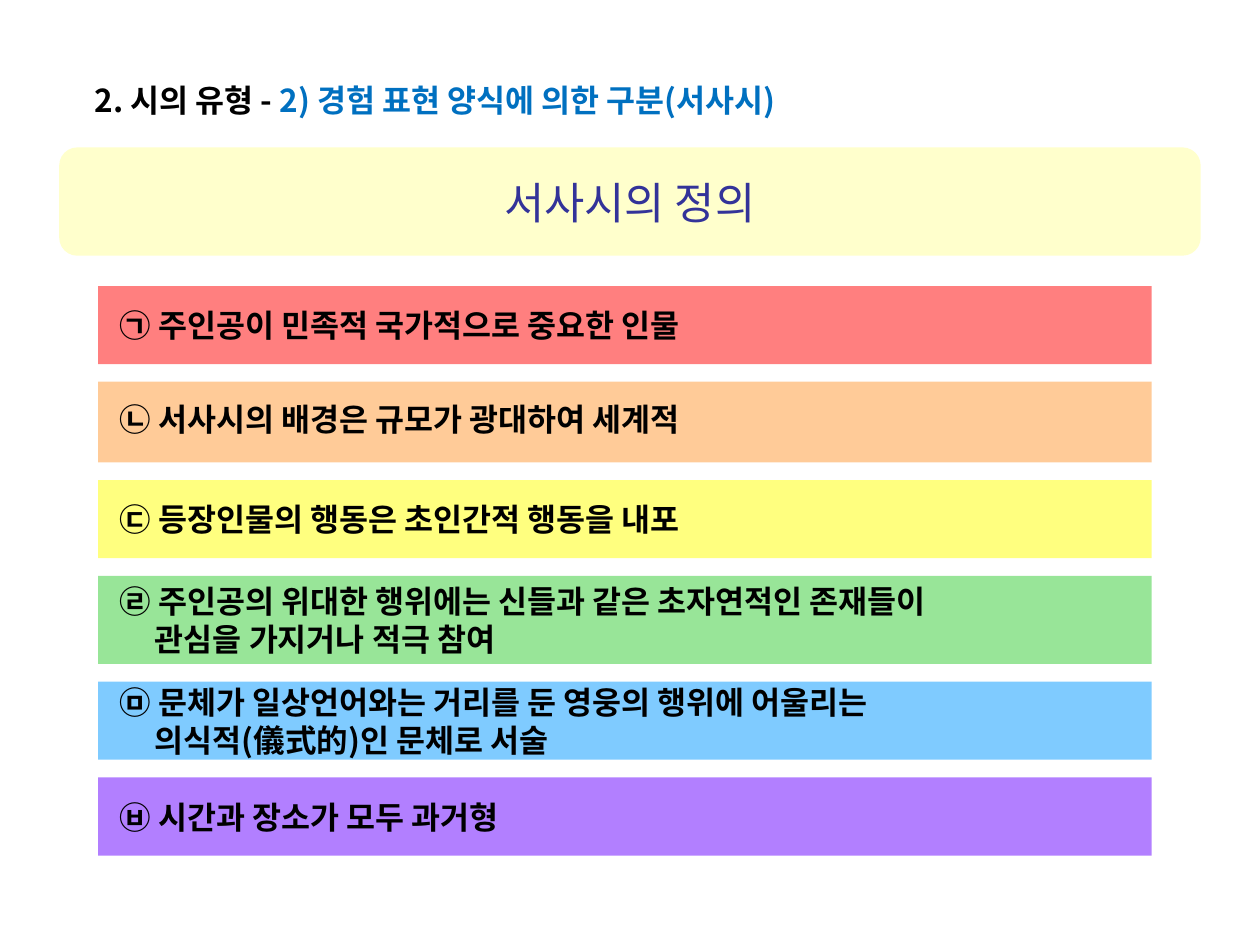
from lxml import etree
from pptx import Presentation
from pptx import util as u
from pptx.dml.color import RGBColor
from pptx.enum import shapes, text
from pptx.oxml.ns import qn

THEME = {
    "font": "Noto Sans CJK KR",
    "body_size": 18,
    "banner_size": 25,
    "black": "000000",
    "blue": "0070C0",
    "navy": "333399",
    "cream": "FFFFCC",
    "opacity": 50,
}


def style_run(run, size, color, bold):
    run.font.name = THEME["font"]
    run.font.size = u.Pt(size)
    run.font.bold = bold
    run.font.color.rgb = RGBColor.from_string(color)
    east_asian = etree.SubElement(run.font._element, qn("a:ea"))
    east_asian.set("typeface", THEME["font"])


def add_panel(slide, kind, left, top, width, height, color):
    shape = slide.shapes.add_shape(
        kind, u.Inches(left), u.Inches(top), u.Inches(width), u.Inches(height))
    shape.shadow.inherit = False
    shape.fill.solid()
    shape.fill.fore_color.rgb = RGBColor.from_string(color)
    shape.line.fill.background()
    shape.text_frame.word_wrap = True
    shape.text_frame.vertical_anchor = text.MSO_ANCHOR.MIDDLE
    return shape


presentation = Presentation()
presentation.slide_width = u.Inches(10)
presentation.slide_height = u.Inches(7.5)
slide = presentation.slides.add_slide(presentation.slide_layouts[5])

# Title
title = slide.shapes.title
title.left, title.top = u.Inches(0.65), u.Inches(0.59)
title.width, title.height = u.Inches(6.46), u.Inches(0.4)
title.text_frame.auto_size = text.MSO_AUTO_SIZE.NONE
title.text_frame.vertical_anchor = text.MSO_ANCHOR.TOP
paragraph = title.text_frame.paragraphs[0]
paragraph.alignment = text.PP_ALIGN.LEFT
for words, color in [("2. 시의 유형 - ", THEME["black"]),
                     ("2) 경험 표현 양식에 의한 구분(서사시)", THEME["blue"])]:
    run = paragraph.add_run()
    run.text = words
    style_run(run, THEME["body_size"], color, True)

# Banner
banner = add_panel(slide, shapes.MSO_SHAPE.ROUNDED_RECTANGLE,
                   0.47, 1.17, 9.06, 0.86, THEME["cream"])
banner.text_frame.text = "서사시의 정의"
paragraph = banner.text_frame.paragraphs[0]
paragraph.alignment = text.PP_ALIGN.CENTER
style_run(paragraph.runs[0], THEME["banner_size"], THEME["navy"], False)

# Stack of definition bars: color, height, line spacing, text
BAR_LEFT, BAR_WIDTH, BAR_GAP = 0.78, 8.36, 0.14
BARS = [
    ("FF0000", 0.62, None, "㉠ 주인공이 민족적 국가적으로 중요한 인물"),
    ("FF9933", 0.64, 0.8, "㉡ 서사시의 배경은 규모가 광대하여 세계적"),
    ("FFFF00", 0.62, None, "㉢ 등장인물의 행동은 초인간적 행동을 내포"),
    ("33CC33", 0.70, None, "㉣ 주인공의 위대한 행위에는 신들과 같은 초자연적인 존재들이\n"
                           "관심을 가지거나 적극 참여"),
    ("0099FF", 0.62, None, "㉤ 문체가 일상언어와는 거리를 둔 영웅의 행위에 어울리는\n"
                           "의식적(儀式的)인 문체로 서술"),
    ("6600FF", 0.62, None, "㉥ 시간과 장소가 모두 과거형"),
]
top = 2.27
for color, height, spacing, words in BARS:
    bar = add_panel(slide, shapes.MSO_SHAPE.RECTANGLE,
                    BAR_LEFT, top, BAR_WIDTH, height, color)
    fill_color = bar.fill._xPr.find(qn("a:solidFill"))[0]
    alpha = etree.SubElement(fill_color, qn("a:alpha"))
    alpha.set("val", str(THEME["opacity"] * 1000))
    bar.text_frame.margin_left = u.Inches(0.17)
    bar.text_frame.text = words
    for index, paragraph in enumerate(bar.text_frame.paragraphs):
        paragraph.alignment = text.PP_ALIGN.LEFT
        paragraph.line_spacing = spacing
        # Continuation lines align with the words after the marker
        paragraph._p.get_or_add_pPr().set("marL", str(u.Inches(0.28 * index)))
        style_run(paragraph.runs[0], THEME["body_size"], THEME["black"], True)
    top += height + BAR_GAP

presentation.save("out.pptx")
